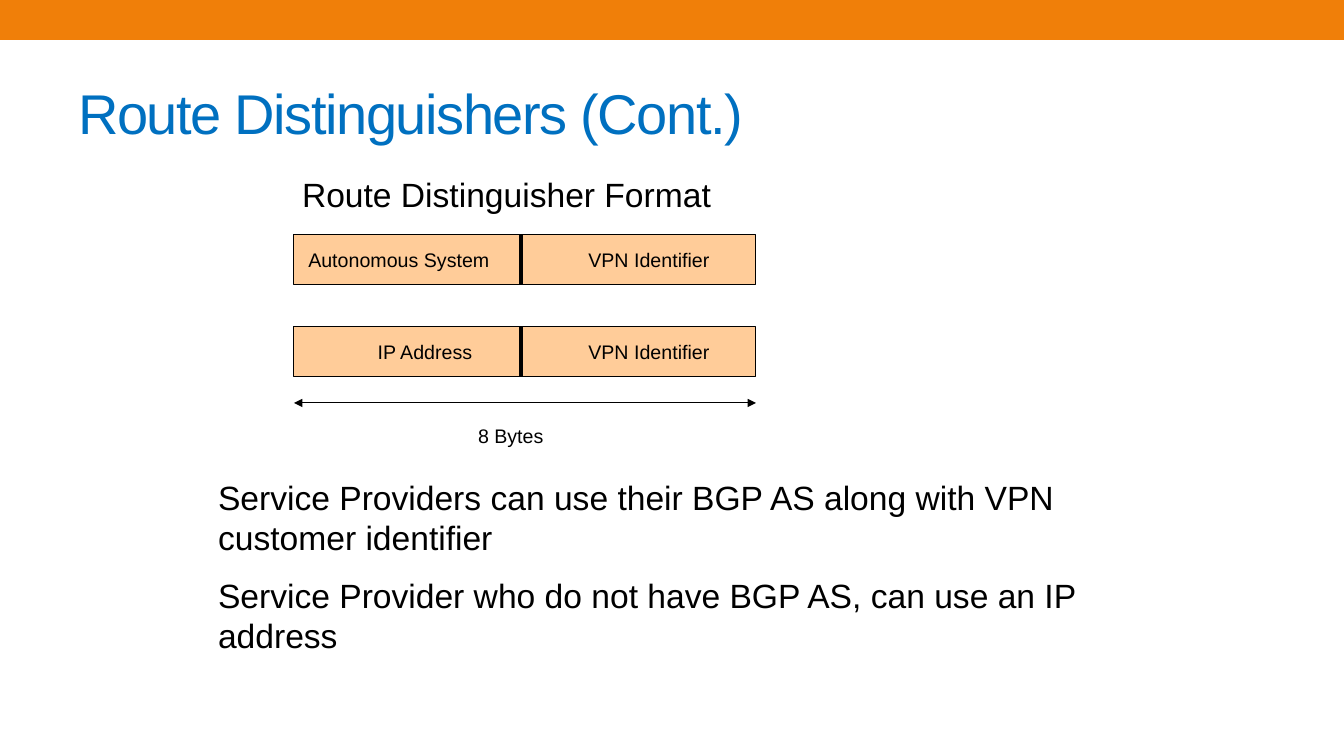
from lxml.etree import SubElement
from pptx import Presentation
from pptx.dml.color import RGBColor
from pptx.enum.shapes import MSO_CONNECTOR, MSO_SHAPE
from pptx.enum.text import MSO_ANCHOR, PP_ALIGN
from pptx.oxml.ns import qn
from pptx.util import Pt

PX = 914400 / 100.8
THEME = {
    "font": "Arial", "title": 40, "body": 24, "label": 14,
    "blue": RGBColor(0x00, 0x70, 0xC0), "orange": RGBColor(0xF0, 0x7F, 0x09),
    "peach": RGBColor(0xFF, 0xCC, 0x99), "black": RGBColor(0, 0, 0),
}

deck = Presentation()
deck.slide_width, deck.slide_height = round(1344 * PX), round(756 * PX)
slide = deck.slides.add_slide(deck.slide_layouts[6])
shapes = slide.shapes


def add_text(box, lines, size, color="black", align=PP_ALIGN.LEFT, gap=0):
    frame = shapes.add_textbox(*[round(n * PX) for n in box]).text_frame
    frame.word_wrap = True
    frame.margin_left = frame.margin_right = round(8 * PX)
    frame.margin_top = frame.margin_bottom = round(4 * PX)
    frame.text = "\n".join(lines)
    for para in frame.paragraphs:
        para.alignment = align
        para.space_before = Pt(gap)
        para.font.name = THEME["font"]
        para.font.size = Pt(THEME[size])
        para.font.color.rgb = THEME[color]
    return frame


def add_line(left, top, right, base, width):
    ends = [round(n * PX) for n in (left, top, right, base)]
    line = shapes.add_connector(MSO_CONNECTOR.STRAIGHT, *ends)
    line.line.color.rgb = THEME["black"]
    line.line.width = Pt(width)
    SubElement(line._element.spPr, qn("a:effectLst"))
    return line


band = shapes.add_shape(MSO_SHAPE.RECTANGLE, 0, 0, deck.slide_width, round(40 * PX))
band.shadow.inherit = False
band.fill.solid()
band.fill.fore_color.rgb = THEME["orange"]
band.line.fill.background()

title = add_text((70, 58, 1206, 109), ["Route Distinguishers (Cont.)"], "title", "blue")
title.vertical_anchor = MSO_ANCHOR.MIDDLE
title.paragraphs[0].runs[0].font._element.set("spc", "-100")

add_text((294, 170, 613, 48), ["Route Distinguisher Format"], "body")

LEFT, MID, RIGHT, TALL = 294, 521, 756, 50
rows = [(235, "Autonomous System", 273), (327, "IP Address", 299)]
for top, name, start in rows:
    bar = shapes.add_shape(
        MSO_SHAPE.RECTANGLE,
        *[round(n * PX) for n in (LEFT, top, RIGHT - LEFT, TALL)])
    bar.shadow.inherit = False
    bar.fill.solid()
    bar.fill.fore_color.rgb = THEME["peach"]
    bar.line.color.rgb = THEME["black"]
    bar.line.width = Pt(0.75)
    add_line(MID, top, MID, top + TALL, 3)
    for text, side in [(name, start), ("VPN Identifier", 523)]:
        add_text((side, top + 9, 252, 32), [text], "label", align=PP_ALIGN.CENTER)

arrow = add_line(LEFT, 403, RIGHT, 403, 0.75)
for end in ("a:headEnd", "a:tailEnd"):
    SubElement(arrow.line._get_or_add_ln(), qn(end), type="triangle")
add_text((470, 420, 86, 32), ["8 Bytes"], "label")

add_text((210, 473, 899, 192), [
    "Service Providers can use their BGP AS along with VPN customer identifier",
    "Service Provider who do not have BGP AS, can use an IP address",
], "body", gap=12)

deck.save("out.pptx")
